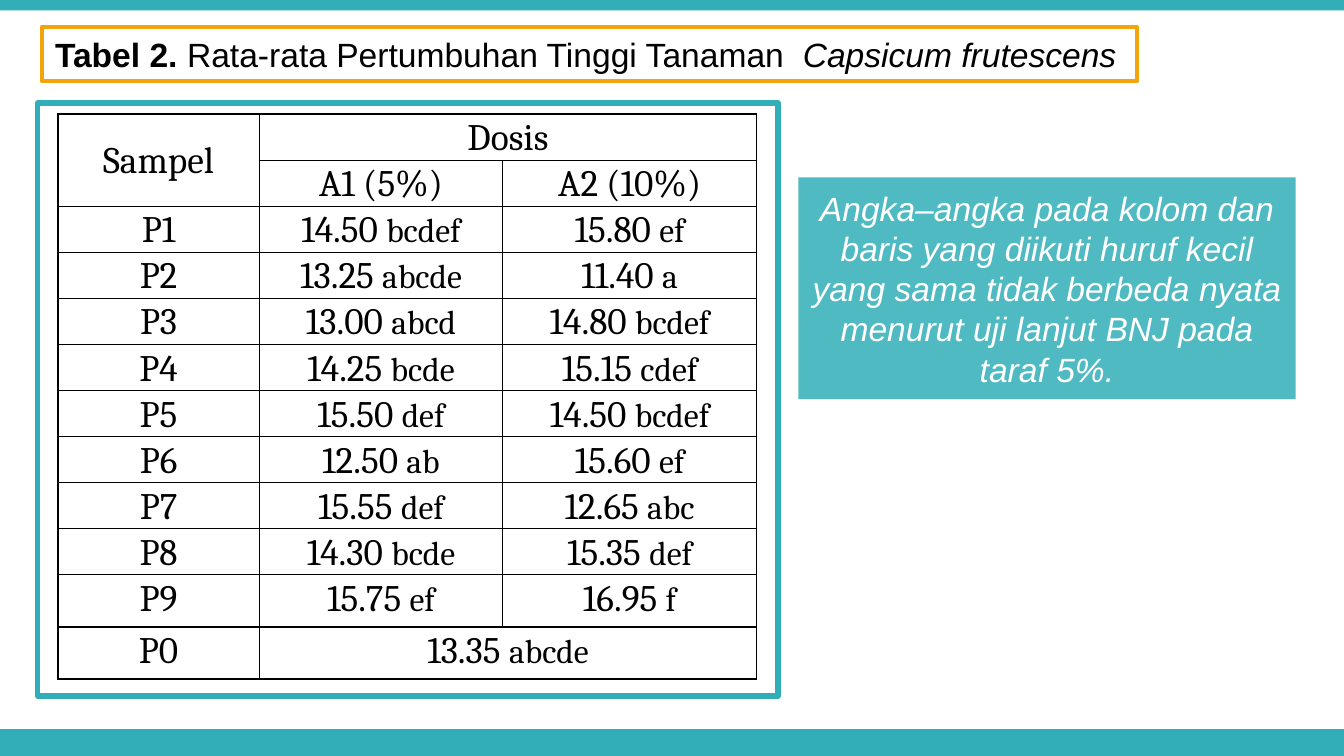
import pptx
import pptx.dml.color
import pptx.enum.shapes
import pptx.enum.text
import pptx.oxml
import pptx.oxml.ns
import pptx.util

COLORS = {"teal": "32AEB8", "amber": "F2A40D", "white": "FFFFFF", "black": "000000"}
SLIDE_WIDTH = pptx.util.Inches(10)
SLIDE_HEIGHT = SLIDE_WIDTH * 9 // 16
COLUMN_SHARES = [15, 18.1, 18.9]
ROW_SHARES = [4.8] * 10 + [6.9] * 2
HEADERS = [["Sampel", "Dosis", ""], ["", "A1 (5%)", "A2 (10%)"]]
MEASUREMENTS = [
    ["P1", "14.50 bcdef", "15.80 ef"],
    ["P2", "13.25 abcde", "11.40 a"],
    ["P3", "13.00 abcd", "14.80 bcdef"],
    ["P4", "14.25 bcde", "15.15 cdef"],
    ["P5", "15.50 def", "14.50 bcdef"],
    ["P6", "12.50 ab", "15.60 ef"],
    ["P7", "15.55 def", "12.65 abc"],
    ["P8", "14.30 bcde", "15.35 def"],
    ["P9", "15.75 ef", "16.95 f"],
    ["P0", "13.35 abcde", ""],
]
NOTE = (
    "Angka–angka pada kolom dan baris yang diikuti huruf kecil "
    "yang sama tidak berbeda nyata menurut uji lanjut BNJ pada taraf 5%."
)


def rgb(name):
    return pptx.dml.color.RGBColor.from_string(COLORS[name])


def across(share):
    return round(SLIDE_WIDTH * share / 100)


def down(share):
    return round(SLIDE_HEIGHT * share / 100)


def area(left, top, width, height):
    return across(left), down(top), across(width), down(height)


def style_box(box, fill, line=None, line_width=0, opacity=100):
    box.fill.solid()
    box.fill.fore_color.rgb = rgb(fill)
    if opacity < 100:
        color = box._element.spPr.find(".//" + pptx.oxml.ns.qn("a:srgbClr"))
        alpha = pptx.oxml.parse_xml(
            f'<a:alpha {pptx.oxml.ns.nsdecls("a")} val="{opacity * 1000}"/>'
        )
        color.append(alpha)
    if line:
        box.line.color.rgb = rgb(line)
        box.line.width = pptx.util.Pt(line_width)
    else:
        box.line.fill.background()


def add_box(slide, position, fill, **style):
    rectangle = pptx.enum.shapes.MSO_SHAPE.RECTANGLE
    box = slide.shapes.add_shape(rectangle, *position)
    box.shadow.inherit = False
    style_box(box, fill, **style)
    return box


def add_span(para, text, size=18, font="Arial", color="black", bold=False, italic=False):
    span = para.add_run()
    span.text = text
    span.font.name = font
    span.font.size = pptx.util.Pt(size)
    span.font.color.rgb = rgb(color)
    span.font.bold = bold
    span.font.italic = italic


def fill_title(slide):
    title = slide.shapes.title
    title.left, title.top, title.width, title.height = area(3.1, 3.56, 81.5, 7.18)
    style_box(title, "white", line="amber", line_width=2)
    frame = title.text_frame
    frame.word_wrap = True
    frame.auto_size = pptx.enum.text.MSO_AUTO_SIZE.NONE
    frame.vertical_anchor = pptx.enum.text.MSO_ANCHOR.TOP
    para = frame.paragraphs[0]
    para.alignment = pptx.enum.text.PP_ALIGN.LEFT
    add_span(para, "Tabel 2. ", bold=True)
    add_span(para, "Rata-rata Pertumbuhan Tinggi Tanaman  ")
    add_span(para, "Capsicum frutescens", italic=True)


def add_borders(cell):
    properties = cell._tc.get_or_add_tcPr()
    for index, side in enumerate(["lnL", "lnR", "lnT", "lnB"]):
        border = pptx.oxml.parse_xml(
            f'<a:{side} {pptx.oxml.ns.nsdecls("a")} w="{pptx.util.Pt(1)}"><a:solidFill>'
            f'<a:srgbClr val="{COLORS["black"]}"/></a:solidFill></a:{side}>'
        )
        properties.insert(index, border)


def format_cell(cell):
    cell.margin_left = cell.margin_right = pptx.util.Inches(0.07)
    cell.margin_top = cell.margin_bottom = 0
    cell.fill.background()
    add_borders(cell)
    para = cell.text_frame.paragraphs[0]
    para.alignment = pptx.enum.text.PP_ALIGN.CENTER
    para.line_spacing = 1.07
    para.font.size = pptx.util.Pt(20)
    return para


def add_growth_table(slide):
    rows = HEADERS + MEASUREMENTS
    position = area(4.3, 15.12, sum(COLUMN_SHARES), sum(ROW_SHARES))
    frame = slide.shapes.add_table(len(rows), len(COLUMN_SHARES), *position)
    table = frame.table
    table.first_row = table.horz_banding = False
    for column, share in zip(table.columns, COLUMN_SHARES):
        column.width = across(share)
    for row, share in zip(table.rows, ROW_SHARES):
        row.height = down(share)
    for row_index, values in enumerate(rows):
        for column_index, value in enumerate(values):
            para = format_cell(table.cell(row_index, column_index))
            if row_index < len(HEADERS):
                parts = [value, "", ""]
            else:
                parts = value.partition(" ")
            number, gap, letters = parts
            if number:
                add_span(para, number + gap, size=20, font="Cambria")
            if letters:
                add_span(para, letters, font="Cambria")
    last_row = len(rows) - 1
    table.cell(0, 0).merge(table.cell(1, 0))
    table.cell(0, 1).merge(table.cell(0, 2))
    table.cell(last_row, 1).merge(table.cell(last_row, 2))
    table.cell(0, 0).vertical_anchor = pptx.enum.text.MSO_ANCHOR.MIDDLE


def add_note(slide):
    box = add_box(slide, area(59.4, 23.45, 37, 29.35), "teal", opacity=85)
    frame = box.text_frame
    frame.word_wrap = True
    frame.vertical_anchor = pptx.enum.text.MSO_ANCHOR.MIDDLE
    para = frame.paragraphs[0]
    para.alignment = pptx.enum.text.PP_ALIGN.CENTER
    add_span(para, NOTE, color="white", italic=True)


def main():
    deck = pptx.Presentation()
    deck.slide_width = SLIDE_WIDTH
    deck.slide_height = SLIDE_HEIGHT
    slide = deck.slides.add_slide(deck.slide_layouts.get_by_name("Title Only"))
    add_box(slide, area(0, 96.45, 100, 3.55), "teal")
    add_box(slide, area(0, 0, 100, 1.4), "teal")
    add_box(slide, area(2.8, 13.65, 55.1, 78.4), "white",
            line="teal", line_width=3, opacity=85)
    fill_title(slide)
    add_growth_table(slide)
    add_note(slide)
    deck.save("out.pptx")


if __name__ == "__main__":
    main()
